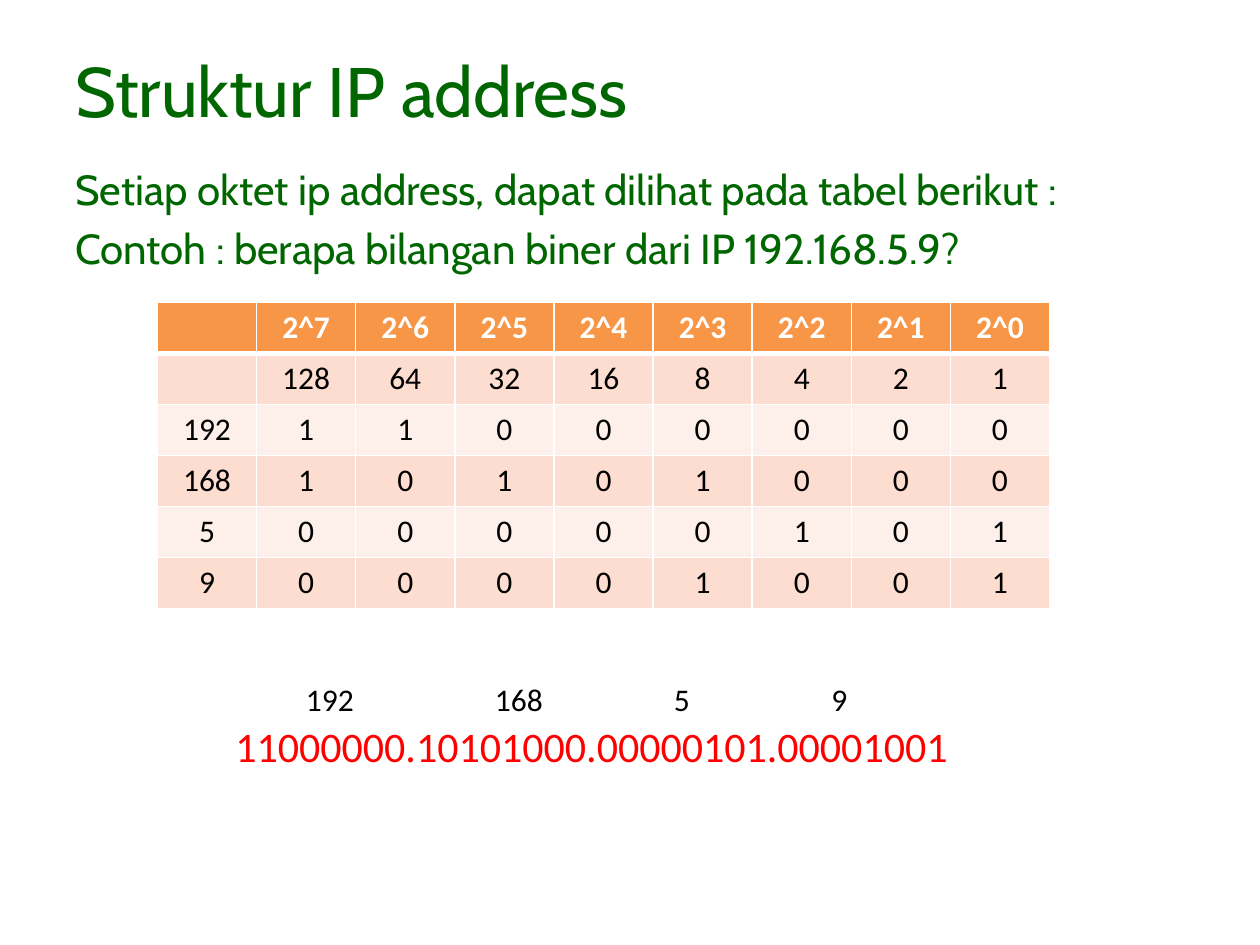
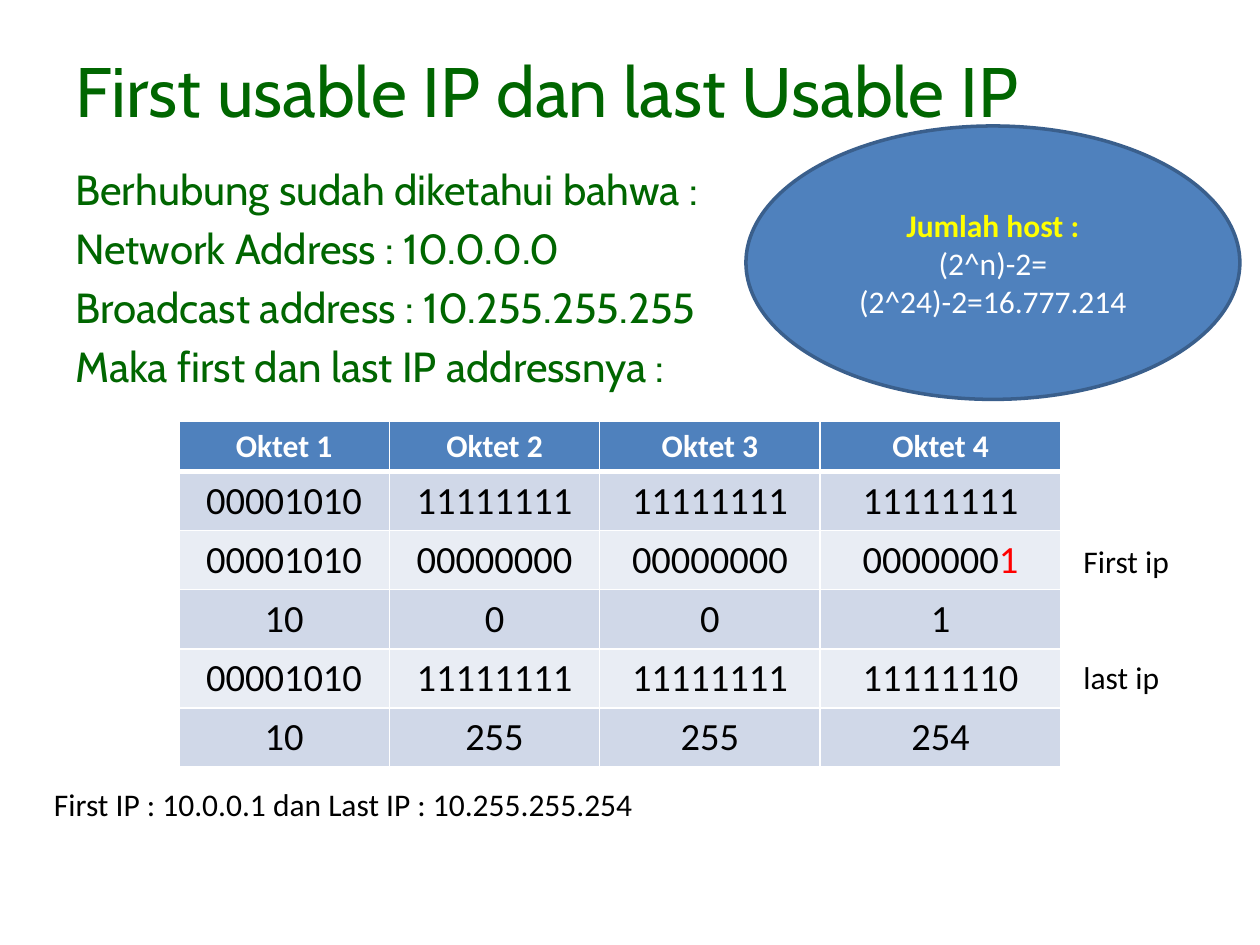
import pptx
import pptx.dml.color
import pptx.enum.shapes
import pptx.enum.text
import pptx.oxml
import pptx.oxml.ns
import pptx.util

Inches = pptx.util.Inches
Pt = pptx.util.Pt
RGBColor = pptx.dml.color.RGBColor
Anchor = pptx.enum.text.MSO_ANCHOR
Align = pptx.enum.text.PP_ALIGN
AutoSize = pptx.enum.text.MSO_AUTO_SIZE

GREEN = RGBColor(0x00, 0x66, 0x00)
BLACK = RGBColor(0x00, 0x00, 0x00)
WHITE = RGBColor(0xFF, 0xFF, 0xFF)
RED = RGBColor(0xFF, 0x00, 0x00)
YELLOW = RGBColor(0xFF, 0xFF, 0x00)
BLUE = RGBColor(0x4F, 0x81, 0xBD)
DARK_BLUE = RGBColor(0x3A, 0x5F, 0x8C)
ORANGE_BANDS = (RGBColor(0xF7, 0x96, 0x46), RGBColor(0xFC, 0xDD, 0xCF), RGBColor(0xFD, 0xEF, 0xE9))
BLUE_BANDS = (BLUE, RGBColor(0xD0, 0xD8, 0xE8), RGBColor(0xE9, 0xED, 0xF4))

HEADING_FONT = "Cabin"
TEXT_FONT = "Calibri"
OCTETS = (192, 168, 5, 9)


def add_run(paragraph, text, size, color, font=TEXT_FONT, bold=False):
    run = paragraph.add_run()
    run.text = text
    run.font.name = font
    run.font.size = Pt(size)
    run.font.color.rgb = color
    run.font.bold = bold


def add_lines(frame, lines, size, color):
    for number, line in enumerate(lines):
        paragraph = frame.add_paragraph() if number else frame.paragraphs[0]
        paragraph.space_before = Pt(0.2 * size if number else 0)
        add_run(paragraph, line, size, color, HEADING_FONT)


def add_heading_and_body(slide, heading, body_lines):
    title = slide.shapes.add_textbox(Inches(0.5), Inches(0.42), Inches(8.58), Inches(0.67)).text_frame
    title.word_wrap = True
    title.vertical_anchor = Anchor.BOTTOM
    add_lines(title, [heading], 40, GREEN)
    body = slide.shapes.add_textbox(Inches(0.5), Inches(1.25), Inches(9), Inches(5.08)).text_frame
    body.word_wrap = True
    add_lines(body, body_lines, 24, GREEN)


def add_label(slide, text, left, top, width, height=0.4, size=18, color=BLACK):
    label = slide.shapes.add_textbox(Inches(left), Inches(top), Inches(width), Inches(height)).text_frame
    label.word_wrap = False
    label.auto_size = AutoSize.SHAPE_TO_FIT_TEXT
    add_run(label.paragraphs[0], text, size, color)


def set_border(cell, side, points):
    cell._tc.get_or_add_tcPr().append(pptx.oxml.parse_xml(
        f'<a:{side} {pptx.oxml.ns.nsdecls("a")} w="{Pt(points)}">'
        f'<a:solidFill><a:srgbClr val="{WHITE}"/></a:solidFill></a:{side}>'))


def add_grid(slide, left, top, column_widths, row_heights, rows, bands, body_size):
    table = slide.shapes.add_table(
        len(rows), len(column_widths), Inches(left), Inches(top),
        Inches(sum(column_widths)), Inches(sum(row_heights))).table
    for column, width in zip(table.columns, column_widths):
        column.width = Inches(width)
    for row, height in zip(table.rows, row_heights):
        row.height = Inches(height)
    for r, values in enumerate(rows):
        header = r == 0
        for c, value in enumerate(values):
            cell = table.cell(r, c)
            set_border(cell, "lnL", 1)
            set_border(cell, "lnR", 1)
            set_border(cell, "lnT", 3 if r == 1 else 1)
            set_border(cell, "lnB", 3 if header else 1)
            cell.fill.solid()
            cell.fill.fore_color.rgb = bands[0] if header else bands[2 - r % 2]
            paragraph = cell.text_frame.paragraphs[0]
            paragraph.alignment = Align.CENTER
            if value:
                add_run(paragraph, value, 18 if header else body_size, WHITE if header else BLACK, bold=header)
    return table


def add_host_count(slide):
    bubble = slide.shapes.add_shape(
        pptx.enum.shapes.MSO_SHAPE.OVAL, Inches(5.92), Inches(1), Inches(3.92), Inches(2.17))
    bubble.shadow.inherit = False
    bubble.fill.solid()
    bubble.fill.fore_color.rgb = BLUE
    bubble.line.color.rgb = DARK_BLUE
    bubble.line.width = Pt(2)
    frame = bubble.text_frame
    frame.word_wrap = True
    frame.vertical_anchor = Anchor.MIDDLE
    for number, line in enumerate(("Jumlah host :", "(2^n)-2=", "(2^24)-2=16.777.214")):
        paragraph = frame.add_paragraph() if number else frame.paragraphs[0]
        paragraph.alignment = Align.CENTER
        add_run(paragraph, line, 18, WHITE if number else YELLOW, bold=number == 0)


def build_structure(slide):
    add_heading_and_body(slide, "Struktur IP address", [
        "Setiap oktet ip address, dapat dilihat pada tabel berikut :",
        "Contoh : berapa bilangan biner dari IP 192.168.5.9?",
    ])
    powers = range(7, -1, -1)
    rows = [[""] + [f"2^{power}" for power in powers],
            [""] + [str(2 ** power) for power in powers]]
    rows += [[str(octet), *f"{octet:08b}"] for octet in OCTETS]
    add_grid(slide, 1.25, 2.4, [7.08 / 9] * 9, [2.43 / 6] * 6, rows, ORANGE_BANDS, 18)
    binary_address = ".".join(f"{octet:08b}" for octet in OCTETS)
    add_label(slide, binary_address, 1.77, 5.67, 5.9, 0.5, 24, RED)
    for octet, left, width in zip(OCTETS, (2.33, 3.83, 5.25, 6.5), (0.59, 0.59, 0.33, 0.33)):
        add_label(slide, str(octet), left, 5.35, width)


def build_usable_range(slide):
    add_heading_and_body(slide, "First usable IP dan last Usable IP", [
        "Berhubung sudah diketahui bahwa :",
        "Network Address : 10.0.0.0",
        "Broadcast address : 10.255.255.255",
        "Maka first dan last IP addressnya :",
    ])
    rows = [[f"Oktet {number}" for number in range(1, 5)],
            ["00001010", "11111111", "11111111", "11111111"],
            ["00001010", "00000000", "00000000", "0000000"],
            ["10", "0", "0", "1"],
            ["00001010", "11111111", "11111111", "11111110"],
            ["10", "255", "255", "254"]]
    octet_table = add_grid(slide, 1.42, 3.34, [1.67, 1.67, 1.75, 1.91],
                           [0.4] + [0.47] * 5, rows, BLUE_BANDS, 22)
    add_run(octet_table.cell(2, 3).text_frame.paragraphs[0], "1", 22, RED)
    add_label(slide, "First ip", 8.5, 4.25, 0.89)
    add_label(slide, "last ip", 8.5, 5.17, 0.81)
    add_label(slide, "First IP : 10.0.0.1 dan Last IP : 10.255.255.254", 0.33, 6.18, 4.84)
    add_host_count(slide)


def main():
    deck = pptx.Presentation()
    deck.slide_width = Inches(10)
    deck.slide_height = Inches(7.5)
    for build in (build_structure, build_usable_range):
        build(deck.slides.add_slide(deck.slide_layouts[6]))
    deck.save("out.pptx")


if __name__ == "__main__":
    main()
